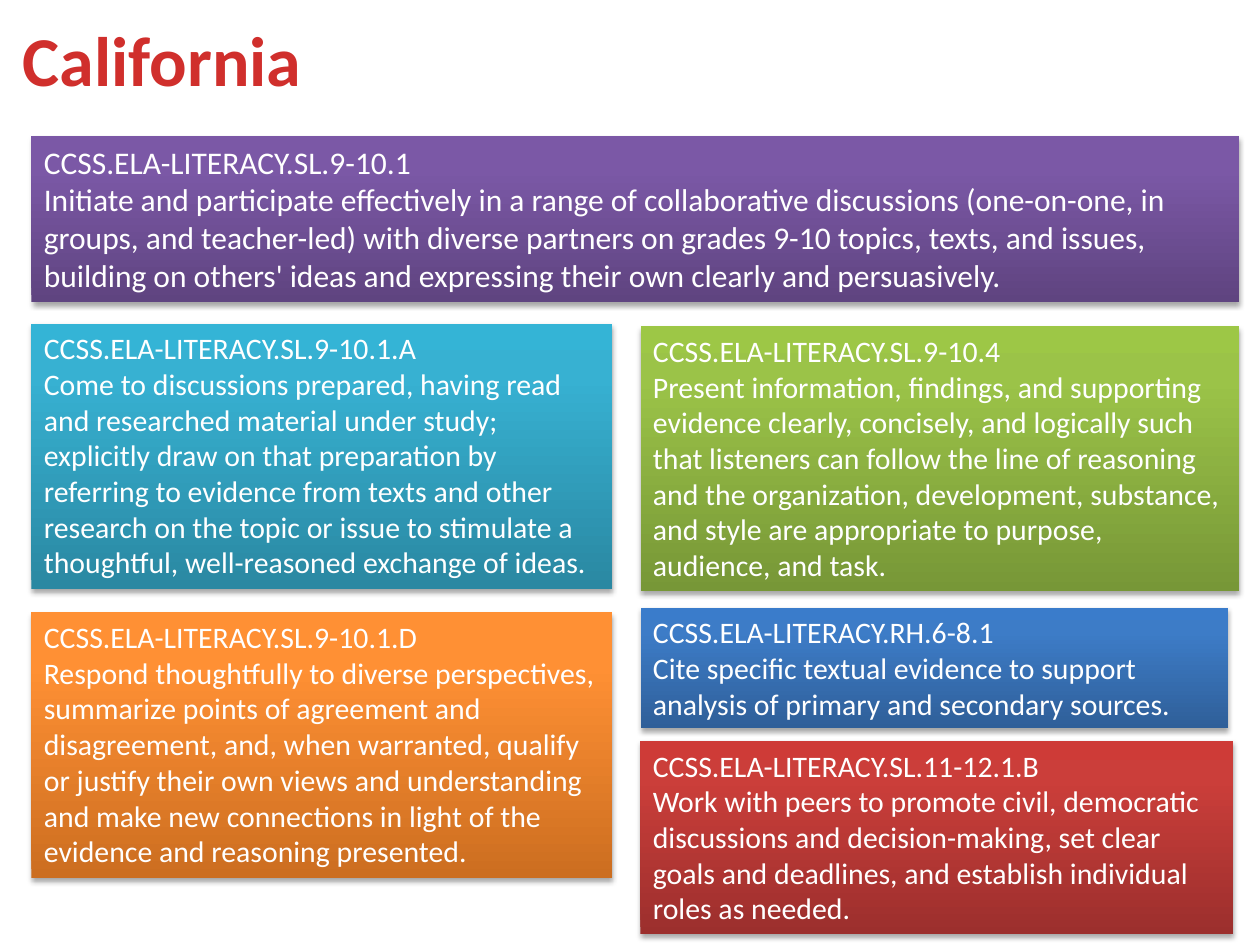
from dataclasses import dataclass

from lxml.etree import SubElement
from pptx import Presentation
from pptx.dml.color import RGBColor
from pptx.enum.shapes import MSO_SHAPE as SHAPE
from pptx.enum.text import MSO_ANCHOR as ANCHOR, PP_ALIGN as ALIGN
from pptx.oxml.ns import qn
from pptx.util import Pt

FONT = "Calibri"
LEFT, RIGHT = 18, 366


@dataclass
class Standard:
    code: str
    text: str
    x: float
    y: float
    w: float
    h: float
    shades: tuple[str, str, str]
    size: float = 17


STANDARDS = [
    Standard("CCSS.ELA-LITERACY.SL.9-10.1",
             "Initiate and participate effectively in a range of collaborative "
             "discussions (one-on-one, in groups, and teacher-led) with diverse "
             "partners on grades 9-10 topics, texts, and issues, building on "
             "others' ideas and expressing their own clearly and persuasively.",
             LEFT, 78, 690, 94.5, ("5F4480", "7B58A6", "7C57A8"), 18),
    Standard("CCSS.ELA-LITERACY.SL.9-10.1.A",
             "Come to discussions prepared, having read and researched material "
             "under study; explicitly draw on that preparation by referring to "
             "evidence from texts and other research on the topic or issue to "
             "stimulate a thoughtful, well-reasoned exchange of ideas.",
             LEFT, 185, 332, 151.5, ("2A88A2", "37B1D2", "34B4D6")),
    Standard("CCSS.ELA-LITERACY.SL.9-10.4",
             "Present information, findings, and supporting evidence clearly, "
             "concisely, and logically such that listeners can follow the line "
             "of reasoning and the organization, development, substance, and "
             "style are appropriate to purpose, audience, and task.",
             RIGHT, 186.5, 342, 151.5, ("779737", "9BC348", "9DC746")),
    Standard("CCSS.ELA-LITERACY.SL.9-10.1.D",
             "Respond thoughtfully to diverse perspectives, summarize points of "
             "agreement and disagreement, and, when warranted, qualify or justify "
             "their own views and understanding and make new connections in "
             "light of the evidence and reasoning presented.",
             LEFT, 350, 332, 151.5, ("CC6E20", "FF9034", "FF9136")),
    Standard("CCSS.ELA-LITERACY.RH.6-8.1",
             "Cite specific textual evidence to support analysis of primary and "
             "secondary sources.",
             RIGHT, 347.25, 336, 69, ("2F5F99", "3D7CC7", "3A7CCB")),
    Standard("CCSS.ELA-LITERACY.SL.11-12.1.B",
             "Work with peers to promote civil, democratic discussions and "
             "decision-making, set clear goals and deadlines, and establish "
             "individual roles as needed.",
             RIGHT, 423.5, 338.5, 110, ("9C2F2D", "CB3E3A", "CE3B37")),
]


def rgb(value: str) -> RGBColor:
    return RGBColor.from_string(value)


def set_gradient(fill, element, shades: tuple[str, ...], middle: int, angle: float) -> None:
    fill.gradient()
    fill.gradient_angle = angle
    stops = element.find(".//" + qn("a:gsLst"))
    for old in list(stops):
        stops.remove(old)
    for pos, shade in zip((0, middle, 100), shades):
        gs = SubElement(stops, qn("a:gs"), pos=str(pos * 1000))
        SubElement(gs, qn("a:srgbClr"), val=str(rgb(shade)))


def add_shadow(sp) -> None:
    sp.shadow.inherit = False
    effects = sp.element.spPr.find(qn("a:effectLst"))
    shadow = SubElement(effects, qn("a:outerShdw"), blurRad=str(Pt(3.1)),
                        dist=str(Pt(1.8)), dir="5400000", rotWithShape="0")
    color = SubElement(shadow, qn("a:srgbClr"), val="000000")
    SubElement(color, qn("a:alpha"), val="35000")


def add_run(p, text: str, size: float, bold: bool = False):
    r = p.add_run()
    r.text = text
    r.font.name, r.font.size, r.font.bold = FONT, Pt(size), bold
    return r


def add_title(s, text: str) -> None:
    sp = s.shapes.add_textbox(Pt(6), Pt(6), Pt(342), Pt(55.5))
    tf = sp.text_frame
    tf.word_wrap = True
    r = add_run(tf.paragraphs[0], text, 40, True)
    set_gradient(r.font.fill, sp.element, ("FC7C7A", "D02F2C", "C70500"), 75, 270)


def add_standard(s, item: Standard) -> None:
    sp = s.shapes.add_shape(SHAPE.RECTANGLE, Pt(item.x), Pt(item.y), Pt(item.w), Pt(item.h))
    set_gradient(sp.fill, sp.element, item.shades, 80, 90)
    sp.line.fill.background()
    add_shadow(sp)
    tf = sp.text_frame
    tf.word_wrap = True
    tf.vertical_anchor = ANCHOR.TOP
    p = tf.paragraphs[0]
    p.alignment = ALIGN.LEFT
    code = add_run(p, item.code, item.size)
    p.add_line_break()
    body = add_run(p, item.text, item.size)
    for r in (code, body):
        r.font.color.rgb = rgb("FFFFFF")


def main() -> None:
    """Build the slide of California literacy standards."""
    prs = Presentation()
    prs.slide_width, prs.slide_height = Pt(720), Pt(540)
    s = prs.slides.add_slide(prs.slide_layouts[6])
    add_title(s, "California")
    for item in STANDARDS:
        add_standard(s, item)
    prs.save("out.pptx")


if __name__ == "__main__":
    main()
